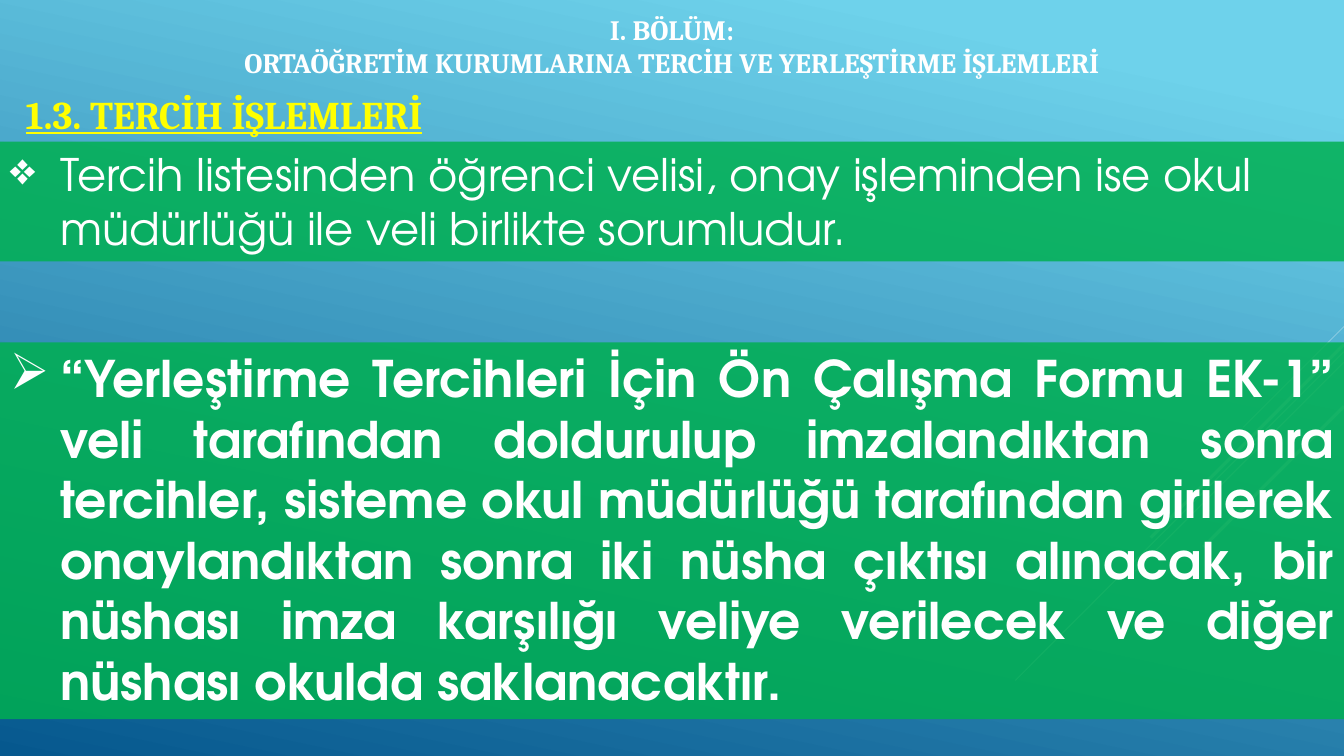
from dataclasses import dataclass

from lxml import etree
from pptx import Presentation
from pptx import util as u
from pptx.dml.color import RGBColor
from pptx.enum import shapes, text
from pptx.oxml import ns

PX = 9525  # EMU in one px
WIDTH, HEIGHT = 1280, 720


@dataclass(frozen=True)
class Theme:
    sky: str = "6ED2EB"
    deep: str = "06588E"
    band: str = "00B050"
    light: str = "FFFFFF"
    accent: str = "FFFF00"
    heading_font: str = "Cambria"
    body_font: str = "TeX Gyre Adventor"
    title_size: int = 20
    section_size: int = 28
    rule_size: int = 32
    form_size: int = 36
    band_alpha: int = 84
    streak_alpha: int = 30


THEME = Theme()
ALIGN = text.PP_ALIGN


def px(*lengths):
    return [u.Emu(length * PX) for length in lengths]


def set_alpha(fill_owner, percent):
    """Make the solid colour below an element partly transparent."""
    color = next(fill_owner.iter(ns.qn("a:srgbClr")))
    etree.SubElement(color, ns.qn("a:alpha"), val=str(percent * 1000))


def add_run(paragraph, words, font, size, color, bold=False, underline=False):
    run = paragraph.add_run()
    run.text = words
    run.font.name = font
    run.font.size = u.Pt(size)
    run.font.color.rgb = RGBColor.from_string(color)
    run.font.bold = bold
    run.font.underline = underline


def paint_background(slide):
    fill = slide.background.fill
    fill.gradient()
    fill.gradient_angle = 360 - 102
    for stop, color, position in zip(
            fill.gradient_stops, (THEME.sky, THEME.deep), (0.1, 1)):
        stop.color.rgb = RGBColor.from_string(color)
        stop.position = position


def add_streaks(slide, right):
    """Diagonal streaks running down and left from the right edge."""
    for top, run, weight in ((311, 96, 0.75), (335, 313, 0.75), (345, 199, 0.75),
                             (328, 184, 2.25), (387, 134, 2.25)):
        streak = slide.shapes.add_connector(
            shapes.MSO_CONNECTOR.STRAIGHT, *px(right, top, right - run, top + run))
        streak.line.width = u.Pt(weight)
        streak.line.color.rgb = RGBColor.from_string(THEME.light)
        properties = streak._element.spPr
        set_alpha(properties, THEME.streak_alpha)
        etree.SubElement(properties, ns.qn("a:effectLst"))


def add_heading(slide, box, lines, size, color, align, wrap=True, underline=False):
    frame = slide.shapes.add_textbox(*px(*box)).text_frame
    frame.word_wrap = wrap
    for index, line in enumerate(lines):
        paragraph = frame.add_paragraph() if index else frame.paragraphs[0]
        paragraph.alignment = align
        add_run(paragraph, line, THEME.heading_font, size, color, True, underline)


def add_band(slide, box, bullet, words, size, align, bold=False):
    """Translucent green band with one bulleted paragraph."""
    band = slide.shapes.add_shape(shapes.MSO_SHAPE.RECTANGLE, *px(*box))
    band.shadow.inherit = False
    band.fill.solid()
    band.fill.fore_color.rgb = RGBColor.from_string(THEME.band)
    set_alpha(band._element.spPr, THEME.band_alpha)
    band.line.fill.background()
    frame = band.text_frame
    frame.word_wrap = True
    frame.vertical_anchor = text.MSO_ANCHOR.TOP
    paragraph = frame.paragraphs[0]
    paragraph.alignment = align
    indent = 48 * PX
    properties = paragraph._p.get_or_add_pPr()
    properties.set("marL", str(indent))
    properties.set("indent", str(-indent))
    etree.SubElement(properties, ns.qn("a:buChar"), char=bullet)
    add_run(paragraph, words, THEME.body_font, size, THEME.light, bold)


def build_slide(slide):
    paint_background(slide)
    add_streaks(slide, WIDTH)
    # Chapter title and section heading
    add_heading(slide, (0, 7, WIDTH, 74),
                ("I. BÖLÜM:",
                 "ORTAÖĞRETİM KURUMLARINA TERCİH VE YERLEŞTİRME İŞLEMLERİ"),
                THEME.title_size, THEME.light, ALIGN.CENTER)
    add_heading(slide, (15, 81, 444, 55), ("1.3. TERCİH İŞLEMLERİ",),
                THEME.section_size, THEME.accent, ALIGN.LEFT,
                wrap=False, underline=True)
    # Responsibility rule
    add_band(slide, (0, 135, WIDTH, 114), "❖",
             "Tercih listesinden öğrenci velisi, onay işleminden ise okul "
             "müdürlüğü ile veli birlikte sorumludur.",
             THEME.rule_size, ALIGN.LEFT)
    # Form procedure
    add_band(slide, (0, 326, WIDTH, 359), "➢",
             "“Yerleştirme Tercihleri İçin Ön Çalışma Formu EK-1” veli "
             "tarafından doldurulup imzalandıktan sonra tercihler, sisteme okul "
             "müdürlüğü tarafından girilerek onaylandıktan sonra iki nüsha "
             "çıktısı alınacak, bir nüshası imza karşılığı veliye verilecek ve "
             "diğer nüshası okulda saklanacaktır.",
             THEME.form_size, ALIGN.JUSTIFY, bold=True)


def main():
    deck = Presentation()
    deck.slide_width, deck.slide_height = px(WIDTH, HEIGHT)
    build_slide(deck.slides.add_slide(deck.slide_layouts[6]))
    deck.save("out.pptx")


if __name__ == "__main__":
    main()
